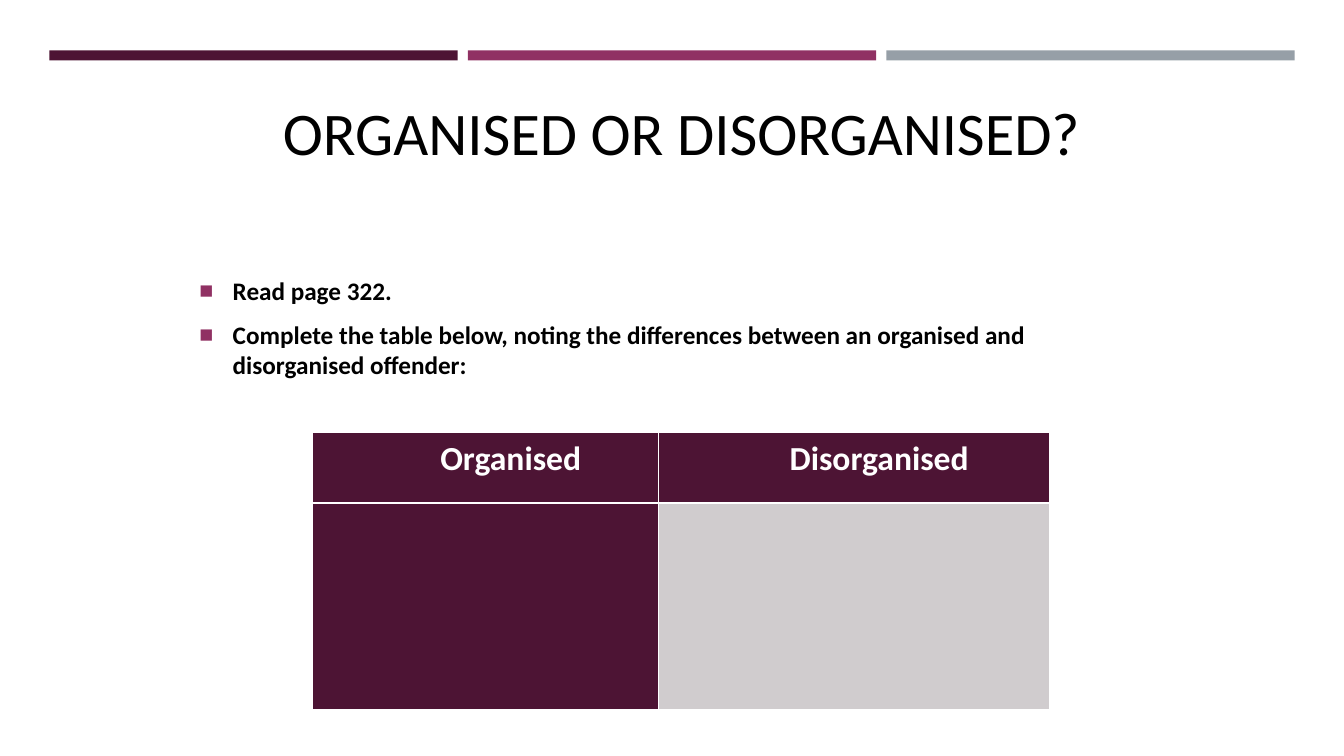
"""Build the slide on organised and disorganised offenders."""
from lxml import etree
from pptx import Presentation
from pptx.dml.color import RGBColor
from pptx.enum.shapes import MSO_SHAPE
from pptx.enum.text import MSO_ANCHOR, PP_ALIGN
from pptx.oxml.ns import qn
from pptx.util import Inches, Pt

RECT = MSO_SHAPE.RECTANGLE
CENTER = PP_ALIGN.CENTER
LEFT = PP_ALIGN.LEFT
TOP, MIDDLE, BOTTOM = MSO_ANCHOR.TOP, MSO_ANCHOR.MIDDLE, MSO_ANCHOR.BOTTOM
PLUM = RGBColor(0x4D, 0x14, 0x34)
BERRY = RGBColor(0x90, 0x31, 0x63)
STEEL = RGBColor(0x96, 0x9F, 0xA7)
PALE = RGBColor(0xD0, 0xCC, 0xCE)
BLACK = RGBColor(0, 0, 0)
WHITE = RGBColor(255, 255, 255)

TITLE = "ORGANISED OR DISORGANISED?"
TASKS = [
    "Read page 322.",
    "Complete the table below, noting the differences between "
    "an organised and disorganised offender:",
]
HEADS = ["Organised", "Disorganised"]
FILLS = [[PLUM, PLUM], [PLUM, PALE]]
COLS = [3.43, 3.88]
ROWS = [0.7, 2.05]
BARS = [PLUM, BERRY, STEEL]
EDGE, BAR, GAP = 0.49, 4.05, 0.1

TITLE_FONT = {"name": "Calibri", "size": Pt(43.2), "bold": False}
TASK_FONT = {"name": "Calibri", "size": Pt(18), "bold": True}
HEAD_FONT = {"name": "Calibri", "size": Pt(24), "bold": True}
TASK_PARA = {"alignment": LEFT, "space_before": Pt(3.6), "space_after": Pt(6)}
HEAD_PARA = {"alignment": CENTER, "line_spacing": 1.15}


def apply(item, vals):
    for key, val in vals.items():
        setattr(item, key, val)


def write(para, text, form, font, color):
    apply(para, form)
    run = para.add_run()
    run.text = text
    apply(run.font, font)
    run.font.color.rgb = color


def add(parent, tag, **vals):
    return etree.SubElement(parent, qn(tag), vals)


def indent(para, left, first):
    props = para._p.get_or_add_pPr()
    props.set("marL", str(Inches(left)))
    props.set("indent", str(Inches(first)))
    return props


def bullet(para):
    props = indent(para, 0.33, -0.33)
    add(add(props, "a:buClr"), "a:srgbClr", val=str(BERRY))
    add(props, "a:buSzPct", val="92000")
    add(props, "a:buFont", typeface="Arial")
    add(props, "a:buChar", char="■")


def paint(cell, color):
    props = cell._tc.get_or_add_tcPr()
    for side in ("a:lnL", "a:lnR", "a:lnT", "a:lnB"):
        line = add(props, side, w=str(Pt(1)))
        add(add(line, "a:solidFill"), "a:srgbClr", val=str(WHITE))
    cell.fill.solid()
    cell.fill.fore_color.rgb = color


def main():
    deck = Presentation()
    deck.slide_width, deck.slide_height = Inches(13.33), Inches(7.5)
    slide = deck.slides.add_slide(deck.slide_layouts[5])
    shapes = slide.shapes

    for i, color in enumerate(BARS):
        left = EDGE + i * (BAR + GAP)
        bar = shapes.add_shape(RECT, *map(Inches, (left, 0.5, BAR, 0.1)))
        bar.shadow.inherit = False
        bar.fill.solid()
        bar.fill.fore_color.rgb = color
        bar.line.fill.background()

    title = shapes.title
    apply(title, {"left": Inches(1.88), "top": Inches(0.92),
                  "width": Inches(9.76), "height": Inches(0.79)})
    apply(title.text_frame, {"vertical_anchor": BOTTOM, "word_wrap": True})
    write(title.text_frame.paragraphs[0], TITLE, {"alignment": CENTER},
          TITLE_FONT, BLACK)

    body = shapes.add_textbox(*map(Inches, (1.88, 2.25, 9.61, 2))).text_frame
    apply(body, {"vertical_anchor": MIDDLE, "word_wrap": True})
    for i, text in enumerate(TASKS):
        para = body.add_paragraph() if i else body.paragraphs[0]
        write(para, text, TASK_PARA, TASK_FONT, BLACK)
        bullet(para)

    spot = map(Inches, (3.1, 4.29, sum(COLS), sum(ROWS)))
    table = shapes.add_table(len(ROWS), len(COLS), *spot).table
    for col, width in zip(table.columns, COLS):
        col.width = Inches(width)
    for r, high in enumerate(ROWS):
        table.rows[r].height = Inches(high)
        for c, color in enumerate(FILLS[r]):
            paint(table.cell(r, c), color)
    for c, text in enumerate(HEADS):
        cell = table.cell(0, c)
        apply(cell, {"margin_left": Inches(0.07), "margin_right": Inches(0.07),
                     "margin_top": 0, "margin_bottom": 0,
                     "vertical_anchor": TOP})
        para = cell.text_frame.paragraphs[0]
        write(para, text, HEAD_PARA, HEAD_FONT, WHITE)
        indent(para, 0.5, 0)

    deck.save("out.pptx")


if __name__ == "__main__":
    main()
